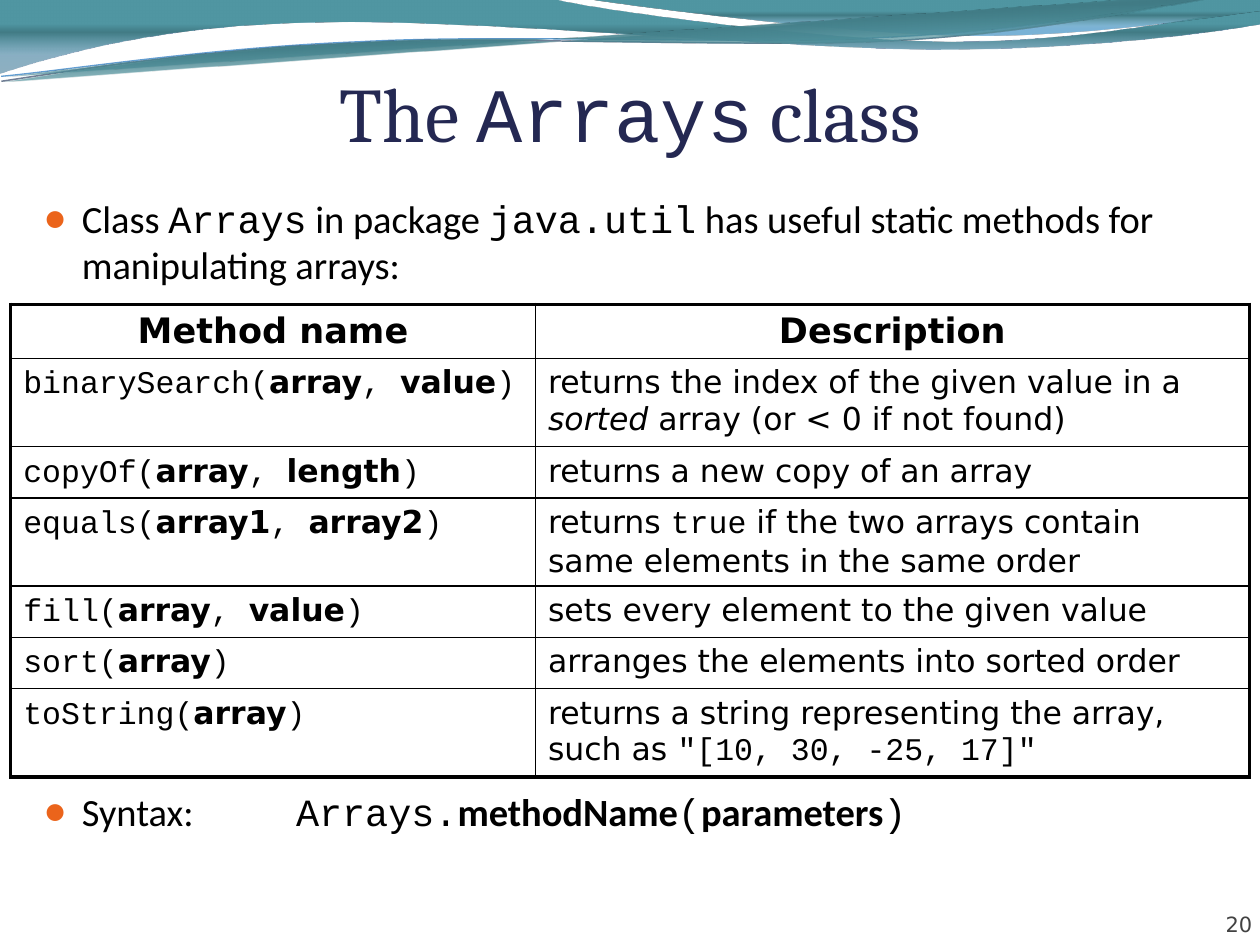
from lxml import etree
from pptx import Presentation
from pptx import util as u
from pptx.dml import color
from pptx.enum import text
from pptx.oxml import ns

CODE, SANS, BODY, HEADING = "Courier New", "DejaVu Sans", "Calibri", "Cambria"
BLACK, WHITE, NAVY, GREY, ORANGE = "000000", "FFFFFF", "242852", "424242", "EB641B"
TEAL = [(33, "5096A2", 100), (44, "417B85", 100), (74, "5AA2AE", 37)]
BLUE_BROAD = [(0, "125EAA", 45), (100, "697FA4", 55)]
BLUE_CORNER = [(0, "596982", 30), (80, "0670DA", 45)]
RIBBON_TILT = -2.7

BROAD = [[(0, 0)], [(4.4, 0)], [(4.76, .09), (6.64, .33), (7.58, .33)],
         [(8.53, .33), (9.58, .14), (10, .05)], [(10.01, .19)],
         [(9.83, .23), (8.7, .39), (7.46, .39)], [(6.22, .39), (3.82, .15), (2.57, .18)],
         [(1.29, .19), (.46, .43), (-.01, .58)]]
CORNER = [[(4.67, 0)], [(4.98, .05), (6.74, .27), (7.63, .28)],
          [(8.52, .3), (9.61, .14), (10, .09)], [(10, 0)]]
LOWER = [[(0, .41)], [(.49, .36), (1.6, .23), (2.79, .24)],
         [(3.98, .23), (5.93, .43), (7.14, .42)], [(8.34, .41), (9.41, .21), (10.02, .16)]]
UPPER = [[(0, .37)], [(.48, .35), (1.66, .22), (2.85, .23)],
         [(4.04, .22), (5.97, .41), (7.16, .39)], [(8.36, .38), (9.41, .2), (10.01, .16)]]


def rgb(value):
    """Return the colour for a hex string."""
    return color.RGBColor.from_string(value)


def grid(*cells):
    """Turn counts of tenth-inch grid cells into lengths."""
    return [u.Inches(cell / 10) for cell in cells]


def add_element(parent, tag, **attributes):
    """Append a drawing element with its attributes."""
    element = etree.SubElement(parent, ns.qn(tag))
    for name, value in attributes.items():
        element.set(name, str(value))
    return element


def add_runs(paragraph, runs, size, value=BLACK):
    """Add runs given as text, font name and optional style letters."""
    for words, font_name, *style in runs:
        run = paragraph.add_run()
        run.text = words
        run.font.name = font_name
        run.font.size = u.Pt(size)
        run.font.bold = "b" in style
        run.font.italic = "i" in style
        run.font.color.rgb = rgb(value)


def call(name, *arguments):
    """Return the runs of a method call with bold arguments."""
    runs = [(name + "(", CODE)]
    for index, argument in enumerate(arguments):
        if index:
            runs.append((", ", CODE))
        runs.append((argument, SANS, "b"))
    return runs + [(")", CODE)]


def add_wave(slide, box, segments, closed, tilt):
    """Draw one curved outline on a band of ten columns and one row."""
    left, top, width, height = box
    outline = [[(round(left + x * width / 10), round(top + y * height)) for x, y in segment]
               for segment in segments]
    builder = slide.shapes.build_freeform(*outline[0][0])
    builder.add_line_segments([segment[-1] for segment in outline[1:]], close=closed)
    wave = builder.convert_to_shape()
    lines = list(wave._element.iter(ns.qn("a:lnTo")))
    for line, segment in zip(lines, outline[1:]):
        if len(segment) == 3:
            curve = etree.Element(ns.qn("a:cubicBezTo"))
            for x, y in segment:
                add_element(curve, "a:pt", x=x - wave.left, y=y - wave.top)
            line.getparent().replace(line, curve)
    wave.rotation = tilt
    wave.shadow.inherit = False
    wave.fill.background()
    wave.line.fill.background()
    return wave


def fill_gradient(shape, stops):
    """Fill a shape with a vertical gradient of translucent stops."""
    properties = shape.fill._xPr
    old_fill = properties.find(ns.qn("a:noFill"))
    gradient = etree.Element(ns.qn("a:gradFill"), rotWithShape="1")
    stop_list = add_element(gradient, "a:gsLst")
    for position, value, alpha in stops:
        stop = add_element(stop_list, "a:gs", pos=position * 1000)
        shade = add_element(stop, "a:srgbClr", val=value)
        add_element(shade, "a:alpha", val=alpha * 1000)
    add_element(gradient, "a:lin", ang=5400000, scaled=0)
    properties.replace(old_fill, gradient)


def add_header_waves(slide, box):
    """Draw the layered waves across the top of the slide."""
    for segments, stops in ((BROAD, BLUE_BROAD), (CORNER, BLUE_CORNER)):
        fill_gradient(add_wave(slide, box, segments, True, 0), stops)
    for segments, value, width in ((LOWER, "707E95", 0.85), (UPPER, "629DD1", 0.75)):
        wave = add_wave(slide, box, segments, False, RIBBON_TILT)
        wave.line.color.rgb = rgb(value)
        wave.line.width = u.Pt(width)
    for segments in (BROAD, CORNER):
        fill_gradient(add_wave(slide, box, segments, True, 0), TEAL)
    for segments in (LOWER, UPPER):
        fill_gradient(add_wave(slide, box, segments, False, RIBBON_TILT), TEAL)


def place(shape, box):
    """Move a shape to a box and return its wrapped text frame."""
    shape.left, shape.top, shape.width, shape.height = box
    frame = shape.text_frame
    frame.word_wrap = True
    frame.auto_size = text.MSO_AUTO_SIZE.NONE
    return frame


def fill_title(slide, box):
    """Write the slide title."""
    frame = place(slide.shapes.title, box)
    frame.vertical_anchor = text.MSO_ANCHOR.BOTTOM
    frame.margin_left = frame.margin_right = frame.margin_bottom = 0
    paragraph = frame.paragraphs[0]
    paragraph.alignment = text.PP_ALIGN.CENTER
    add_runs(paragraph, [("The ", HEADING), ("Arrays", CODE), (" class", HEADING)], 44, NAVY)


def format_bullet(paragraph, space_before):
    """Give a paragraph its bullet, indent, tab stop and spacing."""
    properties = paragraph._p.get_or_add_pPr()
    properties.set("marL", str(u.Inches(0.3)))
    properties.set("indent", str(u.Inches(-0.3)))
    add_element(add_element(properties, "a:buClr"), "a:srgbClr", val=ORANGE)
    add_element(properties, "a:buSzPct", val=95000)
    add_element(properties, "a:buFont", typeface=BODY)
    add_element(properties, "a:buChar", char="●")
    add_element(add_element(properties, "a:tabLst"), "a:tab", pos=u.Inches(2), algn="l")
    paragraph.space_before = u.Pt(space_before)


def fill_body(slide, box):
    """Write the bullets above and below the table."""
    frame = place(slide.placeholders[1], box)
    frame.vertical_anchor = text.MSO_ANCHOR.TOP
    introduction = [("Class ", BODY), ("Arrays", CODE), (" in package ", BODY),
                    ("java.util", CODE),
                    (" has useful static methods for manipulating arrays:", BODY)]
    syntax = [("Syntax:\t", BODY), ("Arrays.", CODE), ("methodName", BODY, "b"),
              ("(", CODE), ("parameters", BODY, "b"), (")", CODE)]
    for paragraph, runs, space in ((frame.paragraphs[0], introduction, 0),
                                   (frame.add_paragraph(), syntax, 286)):
        format_bullet(paragraph, space)
        add_runs(paragraph, runs, 22)


def set_borders(cell, outer):
    """Draw the cell borders, thicker on the outer sides."""
    properties = cell._tc.get_or_add_tcPr()
    for index, side in enumerate("LRTB"):
        width = u.Pt(2.25 if side in outer else 1)
        line = etree.Element(ns.qn("a:ln" + side), w=str(width))
        add_element(add_element(line, "a:solidFill"), "a:srgbClr", val=BLACK)
        properties.insert(index, line)


def add_method_table(slide, box, columns, heights):
    """Add the table of method names and descriptions."""
    rows = [
        ([("Method name", SANS, "b")], [("Description", SANS, "b")]),
        (call("binarySearch", "array", "value"),
         [("returns the index of the given value in a ", SANS), ("sorted", SANS, "i"),
          (" array (or < 0 if not found)", SANS)]),
        (call("copyOf", "array", "length"), [("returns a new copy of an array", SANS)]),
        (call("equals", "array1", "array2"),
         [("returns ", SANS), ("true", CODE),
          (" if the two arrays contain same elements in the same order", SANS)]),
        (call("fill", "array", "value"), [("sets every element to the given value", SANS)]),
        (call("sort", "array"), [("arranges the elements into sorted order", SANS)]),
        (call("toString", "array"),
         [("returns a string representing the array, such as ", SANS),
          ('"[10, 30, -25, 17]"', CODE)]),
    ]
    table = slide.shapes.add_table(len(rows), len(columns), *box).table
    for column, width in zip(table.columns, columns):
        column.width = width
    for r, (row, height) in enumerate(zip(rows, heights)):
        table.rows[r].height = height
        for c, runs in enumerate(row):
            cell = table.cell(r, c)
            cell.fill.solid()
            cell.fill.fore_color.rgb = rgb(WHITE)
            edges = "R" if c else "L"
            edges += "T" if r == 0 else "B" if r == len(rows) - 1 else ""
            set_borders(cell, edges)
            paragraph = cell.text_frame.paragraphs[0]
            paragraph.alignment = text.PP_ALIGN.LEFT if r else text.PP_ALIGN.CENTER
            add_runs(paragraph, runs, 18 if r else 20)


def add_slide_number(slide, box):
    """Write the slide number in the lower right corner."""
    frame = place(slide.shapes.add_textbox(*box), box)
    frame.margin_left = frame.margin_right = frame.margin_top = frame.margin_bottom = 0
    frame.vertical_anchor = text.MSO_ANCHOR.BOTTOM
    paragraph = frame.paragraphs[0]
    paragraph.alignment = text.PP_ALIGN.RIGHT
    add_runs(paragraph, [("20", SANS)], 12, GREY)


def main():
    """Build and save the slide."""
    presentation = Presentation()
    presentation.slide_width, presentation.slide_height = grid(100, 75)
    slide = presentation.slides.add_slide(presentation.slide_layouts[1])
    add_header_waves(slide, grid(0, 0, 100, 10))
    fill_title(slide, grid(5, 4.8, 90, 7.7))
    fill_body(slide, grid(2.5, 15, 97.5, 56.7))
    add_method_table(slide, grid(0.85, 24.15, 98.3, 37.3), grid(41.65, 56.65),
                     grid(4.3, 7, 4.05, 7, 4.05, 4.05, 7))
    add_slide_number(slide, grid(91.1, 70.35, 8.3, 4))
    presentation.save("out.pptx")


if __name__ == "__main__":
    main()
